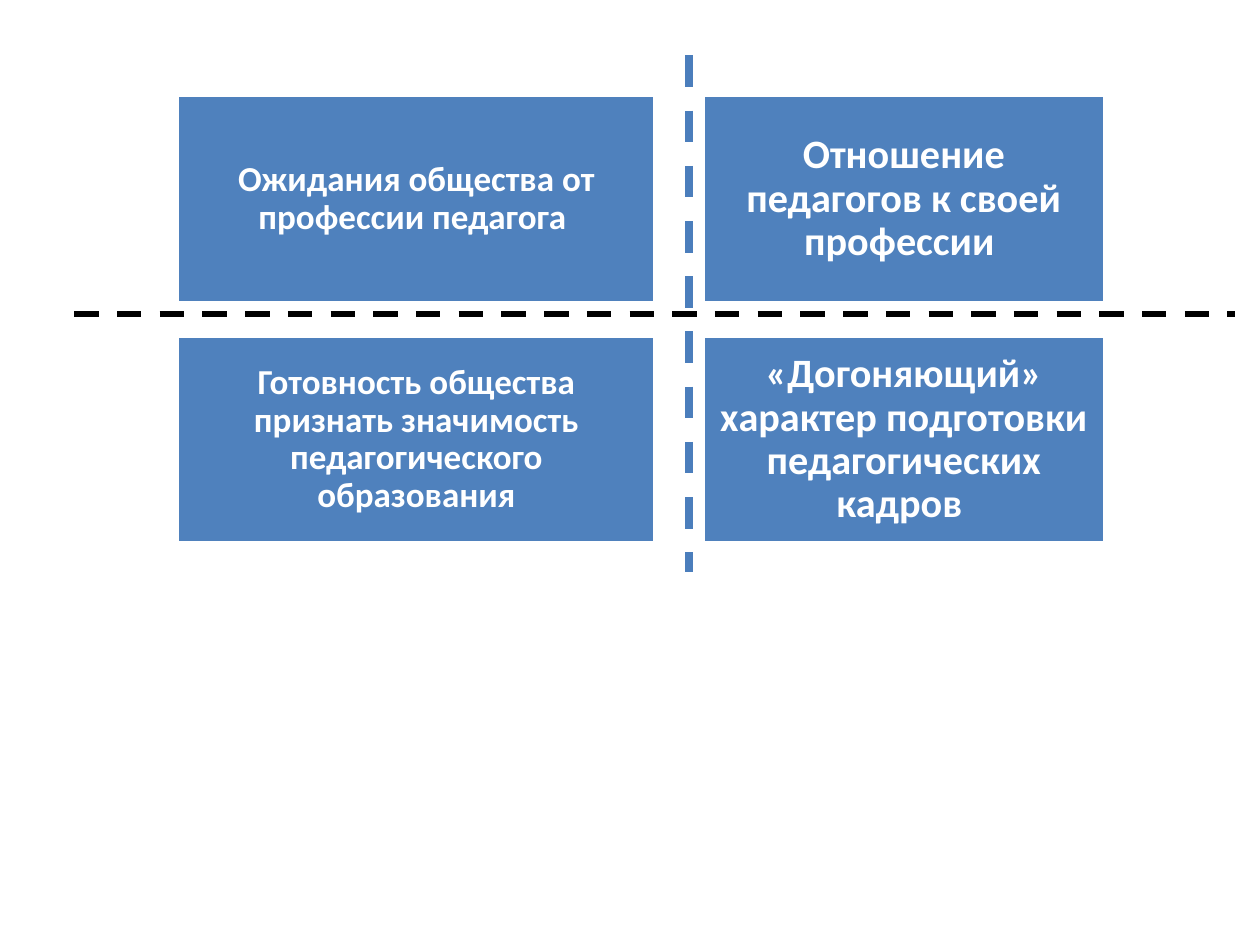
from lxml.etree import SubElement
from pptx import Presentation
from pptx.dml.color import RGBColor
from pptx.enum.dml import MSO_LINE
from pptx.enum.shapes import MSO_CONNECTOR, MSO_SHAPE
from pptx.enum.text import MSO_ANCHOR, PP_ALIGN
from pptx.oxml.ns import qn
from pptx.util import Inches, Pt

COLORS = {"box": "4F81BD", "white": "FFFFFF", "horizontal": "000000", "vertical": "4B7EBC"}

BOX_HEIGHT = 1.64
ROW_TOPS = (0.76, 2.67)
# left, width, text size, text inset
COLUMNS = ((1.41, 3.79, 20, 0.08), (5.58, 3.19, 23, 0.1))
# The trailing spaces take part in the centring of the last line.
STATEMENTS = (
    ("Ожидания общества от профессии педагога ",
     "Отношение педагогов к своей профессии "),
    ("Готовность общества признать значимость педагогического образования",
     "«Догоняющий» характер подготовки педагогических кадров "),
)


def color(name):
    return RGBColor.from_string(COLORS[name])


def add_box(slide, statement, top, column):
    left, width, size, inset = column
    box = slide.shapes.add_shape(MSO_SHAPE.RECTANGLE, Inches(left), Inches(top),
                                 Inches(width), Inches(BOX_HEIGHT))
    box.shadow.inherit = False
    box.fill.solid()
    box.fill.fore_color.rgb = color("box")
    box.line.color.rgb = color("white")
    box.line.width = Pt(2)

    frame = box.text_frame
    frame.text = statement
    frame.word_wrap = True
    frame.vertical_anchor = MSO_ANCHOR.MIDDLE
    frame.margin_left = frame.margin_right = Inches(inset)
    frame.margin_top = frame.margin_bottom = Inches(inset)
    paragraph = frame.paragraphs[0]
    paragraph.alignment = PP_ALIGN.CENTER
    paragraph.line_spacing = 0.9
    font = paragraph.runs[0].font
    font.name = "Calibri"
    font.size = Pt(size)
    font.bold = True
    font.color.rgb = color("white")


def add_dashed_axis(slide, start, end, color_name, width):
    axis = slide.shapes.add_connector(MSO_CONNECTOR.STRAIGHT,
                                      *map(Inches, (*start, *end)))
    axis.line.color.rgb = color(color_name)
    axis.line.width = Pt(width)
    axis.line.dash_style = MSO_LINE.DASH
    SubElement(axis._element.spPr, qn("a:effectLst"))


def main():
    presentation = Presentation()
    presentation.slide_width = Inches(10)
    presentation.slide_height = Inches(7.5)
    slide = presentation.slides.add_slide(presentation.slide_layouts[6])

    for top, row in zip(ROW_TOPS, STATEMENTS):
        for column, statement in zip(COLUMNS, row):
            add_box(slide, statement, top, column)

    add_dashed_axis(slide, (0.59, 2.49), (9.8, 2.49), "horizontal", 3.5)
    add_dashed_axis(slide, (5.47, 0.44), (5.47, 4.54), "vertical", 4.5)
    presentation.save("out.pptx")


if __name__ == "__main__":
    main()
